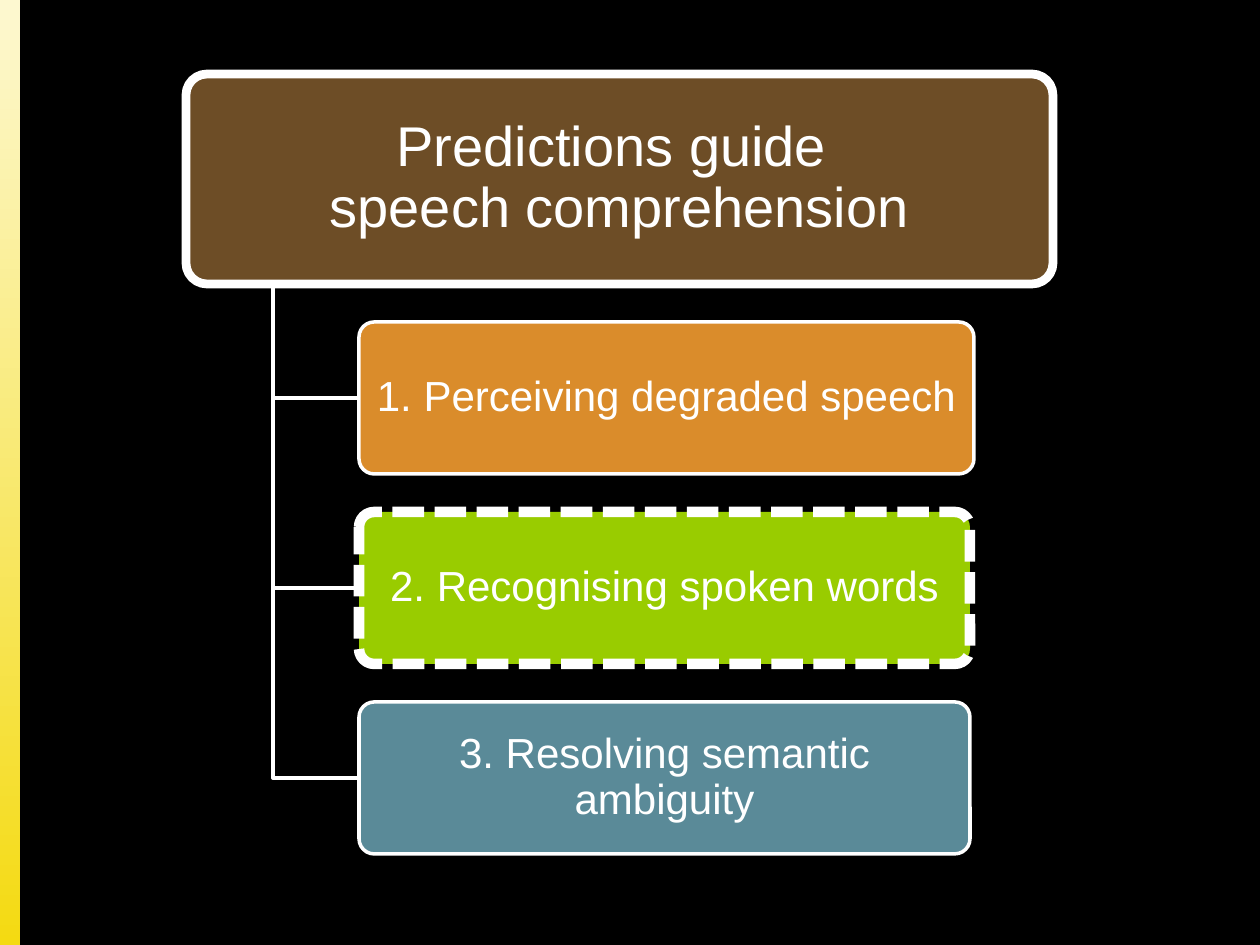
from dataclasses import dataclass

from pptx import Presentation
from pptx import util as u
from pptx.dml.color import RGBColor
from pptx.enum import dml, shapes, text

PX = 914400 / 126

BLACK = RGBColor(0x00, 0x00, 0x00)
WHITE = RGBColor(0xFF, 0xFF, 0xFF)
BROWN = RGBColor(0x6D, 0x4D, 0x26)
ORANGE = RGBColor(0xDA, 0x8C, 0x2B)
GREEN = RGBColor(0x99, 0xCC, 0x00)
TEAL = RGBColor(0x5A, 0x8A, 0x98)
YELLOW = RGBColor(0xF4, 0xDA, 0x12)
CREAM = RGBColor(0xFD, 0xF8, 0xD0)

SLIDE_W, SLIDE_H = 1260, 945
BAR_W = 20
ITEM_X, ITEM_Y, ITEM_H, ITEM_PITCH = 359, 322, 152, 190
TRUNK_X = 273


@dataclass(frozen=True)
class Box:
    x: int
    y: int
    w: int
    h: int


@dataclass(frozen=True)
class Item:
    label: str
    color: RGBColor
    width: int = 611
    line_pt: int = 2
    dashed: bool = False


HEAD = Box(186, 74, 867, 210)
HEAD_LINES = ["Predictions guide ", "speech comprehension"]
ITEMS = [
    Item("1. Perceiving degraded speech", ORANGE, width=615),
    Item("2. Recognising spoken words", GREEN, line_pt=6, dashed=True),
    Item("3. Resolving semantic ambiguity", TEAL),
]


def emu(px: int) -> u.Emu:
    return u.Emu(round(px * PX))


def place(box: Box) -> list[u.Emu]:
    return [emu(v) for v in (box.x, box.y, box.w, box.h)]


def add_card(s, box: Box, color: RGBColor, line_pt: int):
    sp = s.shapes.add_shape(shapes.MSO_SHAPE.ROUNDED_RECTANGLE, *place(box))
    sp.adjustments[0] = 0.1
    sp.shadow.inherit = False
    sp.fill.solid()
    sp.fill.fore_color.rgb = color
    sp.line.color.rgb = WHITE
    sp.line.width = u.Pt(line_pt)
    return sp


def write(tf, lines: list[str], size: int, inset_x: int, inset_y: int) -> None:
    """Fill a frame with one centred paragraph, broken between the given lines."""
    tf.word_wrap = True
    tf.auto_size = text.MSO_AUTO_SIZE.NONE
    tf.vertical_anchor = text.MSO_ANCHOR.MIDDLE
    tf.margin_left = tf.margin_right = emu(inset_x)
    tf.margin_top = tf.margin_bottom = emu(inset_y)
    p = tf.paragraphs[0]
    p.alignment = text.PP_ALIGN.CENTER
    p.line_spacing = 0.9
    p.space_before = u.Pt(0)
    for i, line in enumerate(lines):
        if i:
            p.add_line_break()
        r = p.add_run()
        r.text = line
        r.font.name = "Arial"
        r.font.size = u.Pt(size)
        r.font.color.rgb = WHITE


def add_branch(s, end_y: int) -> None:
    """Draw the elbow from the heading's lower edge to an item's left side."""
    fb = s.shapes.build_freeform(TRUNK_X, HEAD.y + HEAD.h, scale=PX)
    fb.add_line_segments([(TRUNK_X, end_y), (ITEM_X, end_y)], close=False)
    sp = fb.convert_to_shape()
    sp.shadow.inherit = False
    sp.fill.background()
    sp.line.color.rgb = WHITE
    sp.line.width = u.Pt(2)


def add_side_bar(s) -> None:
    sp = s.shapes.add_shape(shapes.MSO_SHAPE.RECTANGLE, *place(Box(0, 0, BAR_W, SLIDE_H)))
    sp.shadow.inherit = False
    sp.line.fill.background()
    sp.fill.gradient()
    sp.fill.gradient_angle = 90
    for stop, position, color in zip(sp.fill.gradient_stops, (0, 1), (YELLOW, CREAM)):
        stop.position = position
        stop.color.rgb = color


def add_heading(s) -> None:
    add_card(s, HEAD, BROWN, 5)
    title = s.shapes.title
    title.left, title.top, title.width, title.height = place(HEAD)
    write(title.text_frame, HEAD_LINES, 32, 15, 11)
    # Bring the title in front of its card
    s.shapes._spTree.append(title._element)


def add_item(s, item: Item, y: int) -> None:
    add_branch(s, y + ITEM_H // 2)
    sp = add_card(s, Box(ITEM_X, y, item.width, ITEM_H), item.color, item.line_pt)
    if item.dashed:
        sp.line.dash_style = dml.MSO_LINE.SQUARE_DOT
    write(sp.text_frame, [item.label], 24, 11, 8)


def main() -> None:
    prs = Presentation()
    prs.slide_width, prs.slide_height = emu(SLIDE_W), emu(SLIDE_H)
    s = prs.slides.add_slide(prs.slide_layouts[5])
    s.background.fill.solid()
    s.background.fill.fore_color.rgb = BLACK
    add_side_bar(s)
    add_heading(s)
    for i, item in enumerate(ITEMS):
        add_item(s, item, ITEM_Y + i * ITEM_PITCH)
    prs.save("out.pptx")


if __name__ == "__main__":
    main()
